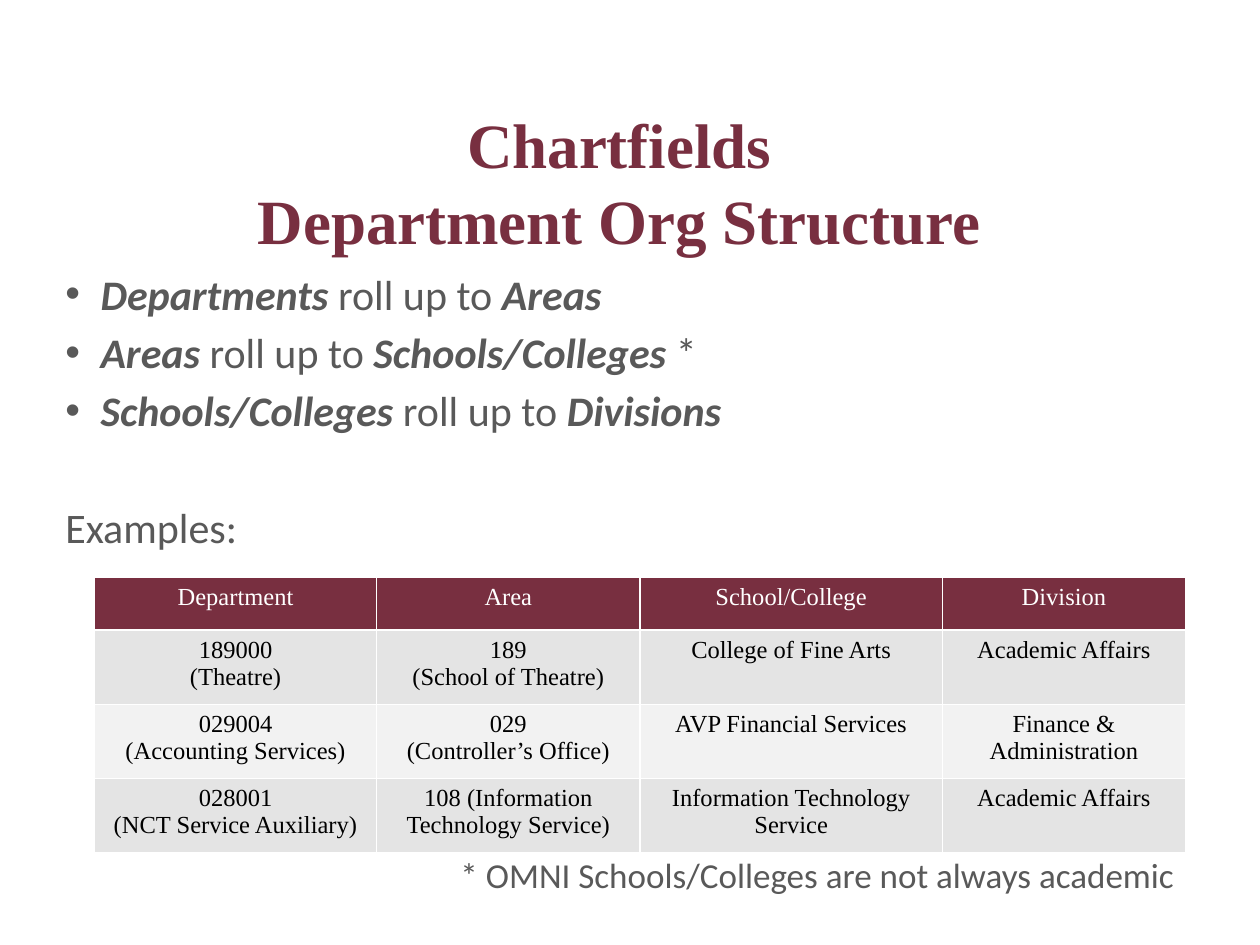
from lxml.etree import SubElement
from pptx import Presentation
from pptx.dml.color import RGBColor
from pptx.enum.text import MSO_ANCHOR, PP_ALIGN
from pptx.oxml.ns import qn
from pptx.util import Inches, Pt

GARNET = RGBColor(0x78, 0x2F, 0x40)
WHITE = RGBColor(0xFF, 0xFF, 0xFF)
BLACK = RGBColor(0x00, 0x00, 0x00)
BODY_GRAY = RGBColor(0x59, 0x59, 0x59)
BANDS = (RGBColor(0xE4, 0xE4, 0xE4), RGBColor(0xF2, 0xF2, 0xF2))
SERIF = "Times New Roman"
SANS = "Calibri"

COLUMN_WIDTHS = (2.24, 2.09, 2.4, 1.93)
HEADER_HEIGHT = 0.42
ROW_HEIGHT = 0.59
TITLE_LINES = ("Chartfields", "Department Org Structure")
ROLL_UPS = (
    ("Departments", "Areas", ""),
    ("Areas", "Schools/Colleges", " *"),
    ("Schools/Colleges", "Divisions", ""),
)
ORG_ROWS = (
    ("Department", "Area", "School/College", "Division"),
    ("189000\n(Theatre)", "189\n(School of Theatre)", "College of Fine Arts", "Academic Affairs"),
    ("029004\n(Accounting Services)", "029\n(Controller’s Office)",
     "AVP Financial Services", "Finance & Administration"),
    ("028001\n(NCT Service Auxiliary)", "108 (Information Technology Service)",
     "Information Technology Service", "Academic Affairs"),
)


def add_run(paragraph, text, font_name, size, color, bold=False, italic=False):
    """Append one formatted run to a paragraph."""
    run = paragraph.add_run()
    run.text = text
    font = run.font
    font.name, font.size, font.bold, font.italic = font_name, Pt(size), bold, italic
    font.color.rgb = color


def next_paragraph(text_frame, index):
    """Return the first paragraph for index zero, otherwise a new one."""
    return text_frame.add_paragraph() if index else text_frame.paragraphs[0]


def add_centered_lines(text_frame, lines, size, color, bold=False):
    """Write each line as a centred serif paragraph."""
    for index, line in enumerate(lines):
        paragraph = next_paragraph(text_frame, index)
        paragraph.alignment = PP_ALIGN.CENTER
        add_run(paragraph, line, SERIF, size, color, bold)


def add_bullet(paragraph):
    """Give a paragraph a round bullet with a hanging indent."""
    properties = paragraph._p.get_or_add_pPr()
    properties.set("marL", str(Inches(0.28)))
    properties.set("indent", str(-Inches(0.28)))
    SubElement(properties, qn("a:buFont"), typeface="Arial")
    SubElement(properties, qn("a:buChar"), char="•")


def format_title(title):
    """Place the title and write its two lines."""
    title.left, title.top = Inches(1.27), Inches(0.92)
    title.width, title.height = Inches(7.29), Inches(1.17)
    text_frame = title.text_frame
    text_frame.margin_left = text_frame.margin_right = Inches(0.3)
    text_frame.margin_top = text_frame.margin_bottom = Inches(0.05)
    text_frame.vertical_anchor = MSO_ANCHOR.BOTTOM
    add_centered_lines(text_frame, TITLE_LINES, 36, GARNET, bold=True)


def add_body(slide):
    """Add the roll-up bullets, the examples label and the footnote."""
    box = slide.shapes.add_textbox(Inches(0.42), Inches(2.08), Inches(9), Inches(5.16))
    text_frame = box.text_frame
    text_frame.word_wrap = True
    for index, (lower, upper, mark) in enumerate(ROLL_UPS):
        paragraph = next_paragraph(text_frame, index)
        add_bullet(paragraph)
        if index:
            paragraph.space_before = Pt(4.5)
        add_run(paragraph, lower, SANS, 24, BODY_GRAY, True, True)
        add_run(paragraph, " roll up to ", SANS, 24, BODY_GRAY)
        add_run(paragraph, upper, SANS, 24, BODY_GRAY, True, True)
        if mark:
            add_run(paragraph, mark, SANS, 24, BODY_GRAY)
    closing_lines = (
        ("Examples:", 24, 38, PP_ALIGN.LEFT),
        ("* OMNI Schools/Colleges are not always academic", 20, 172, PP_ALIGN.RIGHT),
    )
    for text, size, gap, alignment in closing_lines:
        paragraph = text_frame.add_paragraph()
        paragraph.space_before = Pt(gap)
        paragraph.alignment = alignment
        add_run(paragraph, text, SANS, size, BODY_GRAY)


def add_org_table(slide):
    """Add the table of example departments."""
    height = HEADER_HEIGHT + ROW_HEIGHT * (len(ORG_ROWS) - 1)
    table = slide.shapes.add_table(
        len(ORG_ROWS), len(COLUMN_WIDTHS),
        Inches(0.75), Inches(4.58), Inches(sum(COLUMN_WIDTHS)), Inches(height),
    ).table
    for column, width in zip(table.columns, COLUMN_WIDTHS):
        column.width = Inches(width)
    for row_index, texts in enumerate(ORG_ROWS):
        table.rows[row_index].height = Inches(ROW_HEIGHT if row_index else HEADER_HEIGHT)
        fill_color = BANDS[(row_index - 1) % 2] if row_index else GARNET
        text_color = BLACK if row_index else WHITE
        for column_index, text in enumerate(texts):
            cell = table.cell(row_index, column_index)
            cell.fill.solid()
            cell.fill.fore_color.rgb = fill_color
            add_centered_lines(cell.text_frame, text.split("\n"), 14, text_color)


def main():
    """Build and save the slide."""
    presentation = Presentation()
    presentation.slide_width, presentation.slide_height = Inches(10), Inches(7.5)
    slide = presentation.slides.add_slide(presentation.slide_layouts[5])
    format_title(slide.shapes.title)
    add_body(slide)
    add_org_table(slide)
    presentation.save("out.pptx")


if __name__ == "__main__":
    main()
